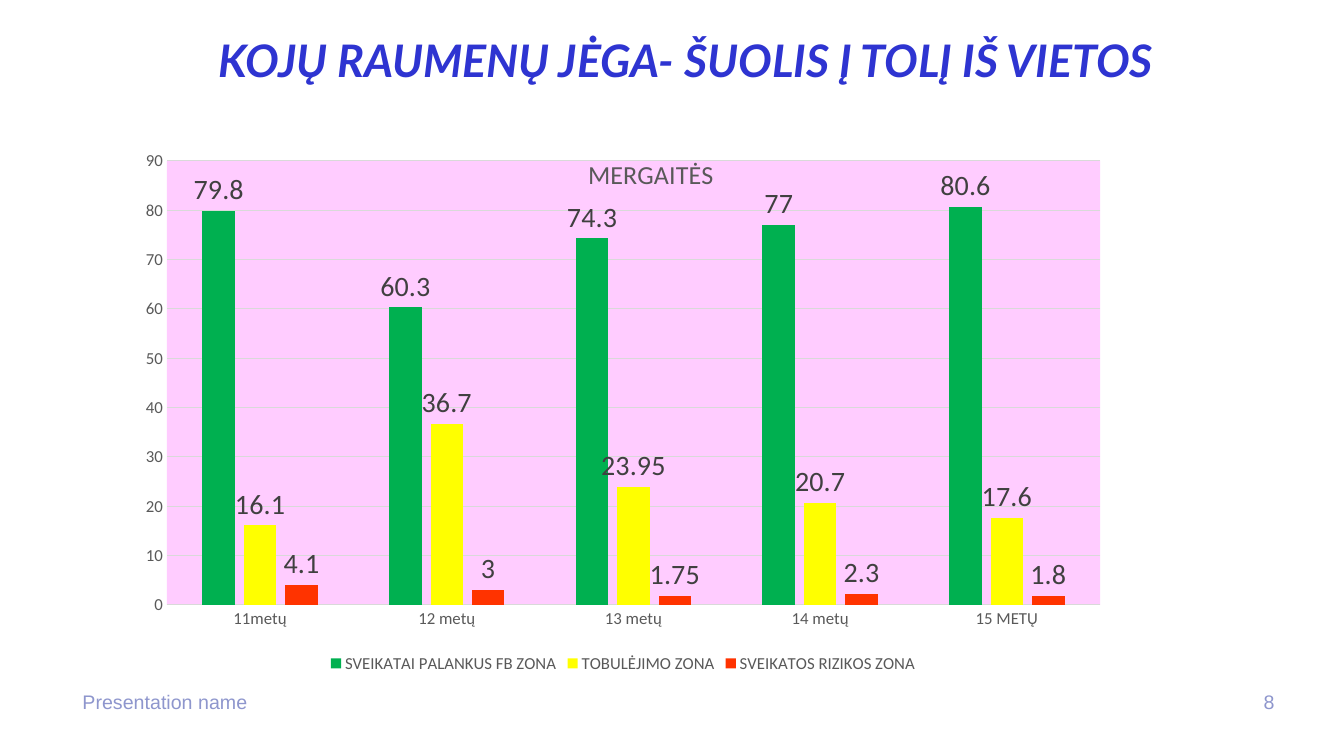
from dataclasses import dataclass

from lxml import etree
from pptx import Presentation
from pptx import util as u
from pptx.chart.data import CategoryChartData
from pptx.dml.color import RGBColor
from pptx.enum import chart as ch, text
from pptx.oxml import parse_xml
from pptx.oxml.ns import nsdecls, qn


@dataclass(frozen=True)
class Theme:
    heading: dict
    footer: dict
    chart_base: dict
    chart_title: dict
    axis: dict
    labels: dict
    rule: str = "D9D9D9"
    plot: str = "FFCCFF"


THEME = Theme(
    heading=dict(name="Lato", size=32, color="2E34D1", bold=True, italic=True),
    footer=dict(name="Arial", size=14, color="8E96CD"),
    chart_base=dict(name="Calibri", size=10, color="000000"),
    chart_title=dict(name="Calibri", size=18.6, color="595959", bold=False),
    axis=dict(name="Calibri", size=12, color="595959"),
    labels=dict(name="Calibri", size=20, color="404040"),
)

AGES = ["11metų", "12 metų", "13 metų", "14 metų", "15 METŲ"]
ZONES = [
    ("SVEIKATAI PALANKUS FB ZONA", [79.8, 60.3, 74.3, 77, 80.6], "00B050"),
    ("TOBULĖJIMO ZONA", [16.1, 36.7, 23.95, 20.7, 17.6], "FFFF00"),
    ("SVEIKATOS RIZIKOS ZONA", [4.1, 3, 1.75, 2.3, 1.8], "FF3300"),
]


def assign(target, **values):
    for key, value in values.items():
        setattr(target, key, value)


def style(font, values):
    for key, value in values.items():
        if key == "color":
            font.color.rgb = RGBColor.from_string(value)
        else:
            setattr(font, key, u.Pt(value) if key == "size" else value)


def draw_rule(line):
    line.color.rgb = RGBColor.from_string(THEME.rule)
    line.width = u.Pt(0.75)


def set_layout(element, index, **fractions):
    for old in element.findall(qn("c:layout")):
        element.remove(old)
    layout = etree.Element(qn("c:layout"))
    manual = etree.SubElement(layout, qn("c:manualLayout"))
    settings = {"xMode": "edge", "yMode": "edge", **fractions}
    if "w" in fractions:
        settings = {"layoutTarget": "inner", **settings}
    for key, value in settings.items():
        etree.SubElement(manual, qn(f"c:{key}")).set("val", str(value))
    element.insert(index, layout)


def add_heading(slide, box, wording):
    heading = slide.shapes.title
    assign(heading, **dict(zip(("left", "top", "width", "height"), box)))
    frame = heading.text_frame
    frame.text = wording
    assign(frame, word_wrap=True, auto_size=text.MSO_AUTO_SIZE.NONE,
           vertical_anchor=text.MSO_ANCHOR.TOP)
    paragraph = frame.paragraphs[0]
    assign(paragraph, alignment=text.PP_ALIGN.CENTER, line_spacing=0.9)
    style(paragraph.runs[0].font, THEME.heading)


def add_footer(slide, box, wording, number):
    left, top, width, height = box
    number_width = u.Inches(0.52)
    parts = [
        (wording, left, u.Inches(6.3), text.PP_ALIGN.LEFT),
        (number, left + width - number_width, number_width, text.PP_ALIGN.RIGHT),
    ]
    for part, part_left, part_width, alignment in parts:
        frame = slide.shapes.add_textbox(part_left, top, part_width, height).text_frame
        frame.word_wrap = True
        frame.text = part
        frame.paragraphs[0].alignment = alignment
        style(frame.paragraphs[0].runs[0].font, THEME.footer)


def format_axes(chart):
    ages, percent = chart.category_axis, chart.value_axis
    for axis in (ages, percent):
        assign(axis, major_tick_mark=ch.XL_TICK_MARK.NONE,
               minor_tick_mark=ch.XL_TICK_MARK.NONE)
        style(axis.tick_labels.font, THEME.axis)
    draw_rule(ages.format.line)
    assign(percent, minimum_scale=0, maximum_scale=90, major_unit=10,
           has_major_gridlines=True)
    percent.format.line.fill.background()
    draw_rule(percent.major_gridlines.format.line)


def format_zones(plot):
    assign(plot, gap_width=219, overlap=-27, vary_by_categories=False)
    for zone, (_, _, color) in zip(plot.series, ZONES):
        zone.format.fill.solid()
        zone.format.fill.fore_color.rgb = RGBColor.from_string(color)
        zone.invert_if_negative = False
        labels = zone.data_labels
        assign(labels, show_value=True, position=ch.XL_LABEL_POSITION.OUTSIDE_END)
        style(labels.font, THEME.labels)


def add_jump_chart(slide, box, wording):
    data = CategoryChartData()
    data.categories = AGES
    for name, values, _ in ZONES:
        data.add_series(name, values)
    chart = slide.shapes.add_chart(
        ch.XL_CHART_TYPE.COLUMN_CLUSTERED, *box, data).chart
    style(chart.font, THEME.chart_base)

    chart.has_title = True
    group_title = chart.chart_title
    group_title.text_frame.text = wording
    style(group_title.text_frame.paragraphs[0].runs[0].font, THEME.chart_title)
    title_xml = group_title._element
    set_layout(title_xml, 1, x=0.46, y=0.12)
    title_xml.find(qn("c:overlay")).set("val", "1")

    chart.has_legend = True
    assign(chart.legend, position=ch.XL_LEGEND_POSITION.BOTTOM,
           include_in_layout=False)
    style(chart.legend.font, THEME.axis)

    format_axes(chart)
    format_zones(chart.plots[0])
    plot_area = chart._chartSpace.chart.plotArea
    set_layout(plot_area, 0, x=0.041, y=0.136, w=0.939, h=0.743)
    plot_area.append(parse_xml(
        f'<c:spPr {nsdecls("c", "a")}><a:solidFill>'
        f'<a:srgbClr val="{THEME.plot}"/></a:solidFill></c:spPr>'))


def inches(*lengths):
    return [u.Inches(length) for length in lengths]


def main():
    deck = Presentation()
    deck.slide_width, deck.slide_height = inches(13.33, 7.5)
    slide = deck.slides.add_slide(deck.slide_layouts[5])
    add_heading(slide, inches(0.72, 0.33, 12.17, 0.8),
                "KOJŲ RAUMENŲ JĖGA- ŠUOLIS Į TOLĮ IŠ VIETOS")
    add_footer(slide, inches(0.72, 6.79, 12.02, 0.38), "Presentation name", "8")
    add_jump_chart(slide, inches(1.25, 0.79, 9.86, 5.93), "MERGAITĖS")
    deck.save("out.pptx")


if __name__ == "__main__":
    main()
